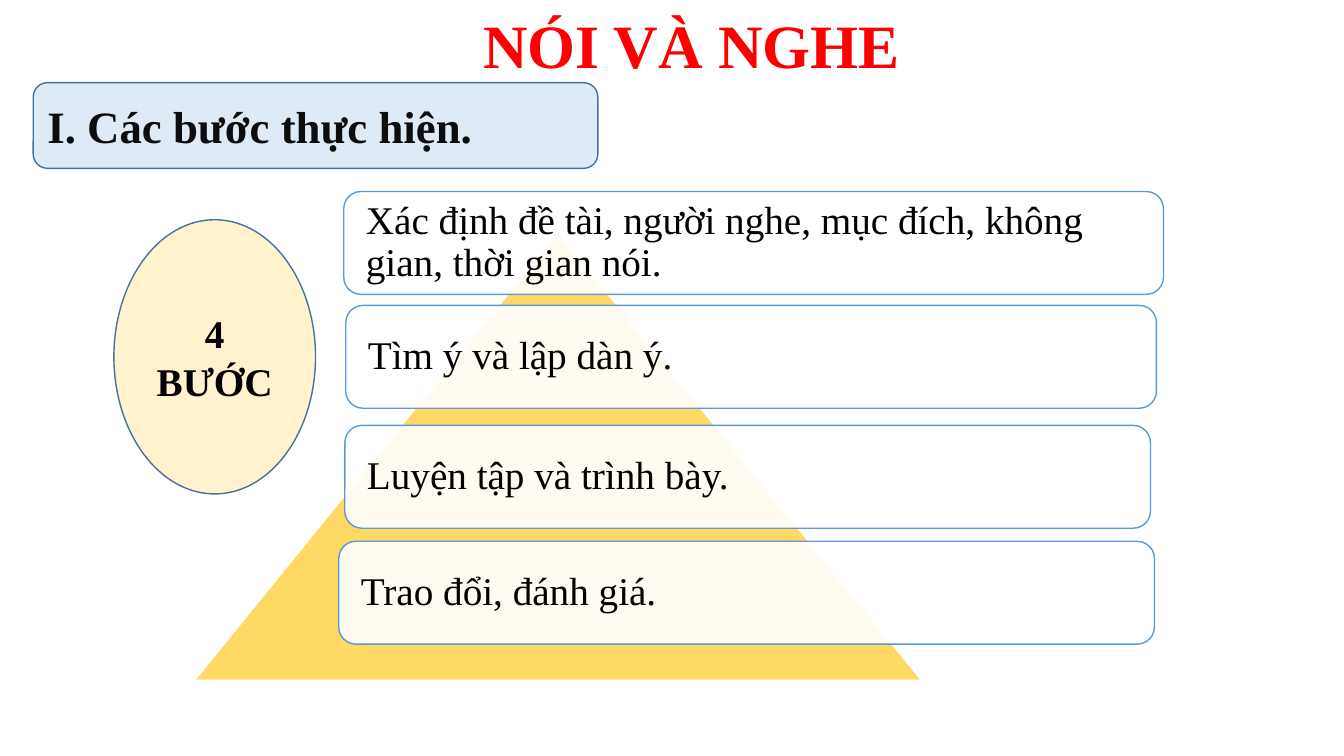
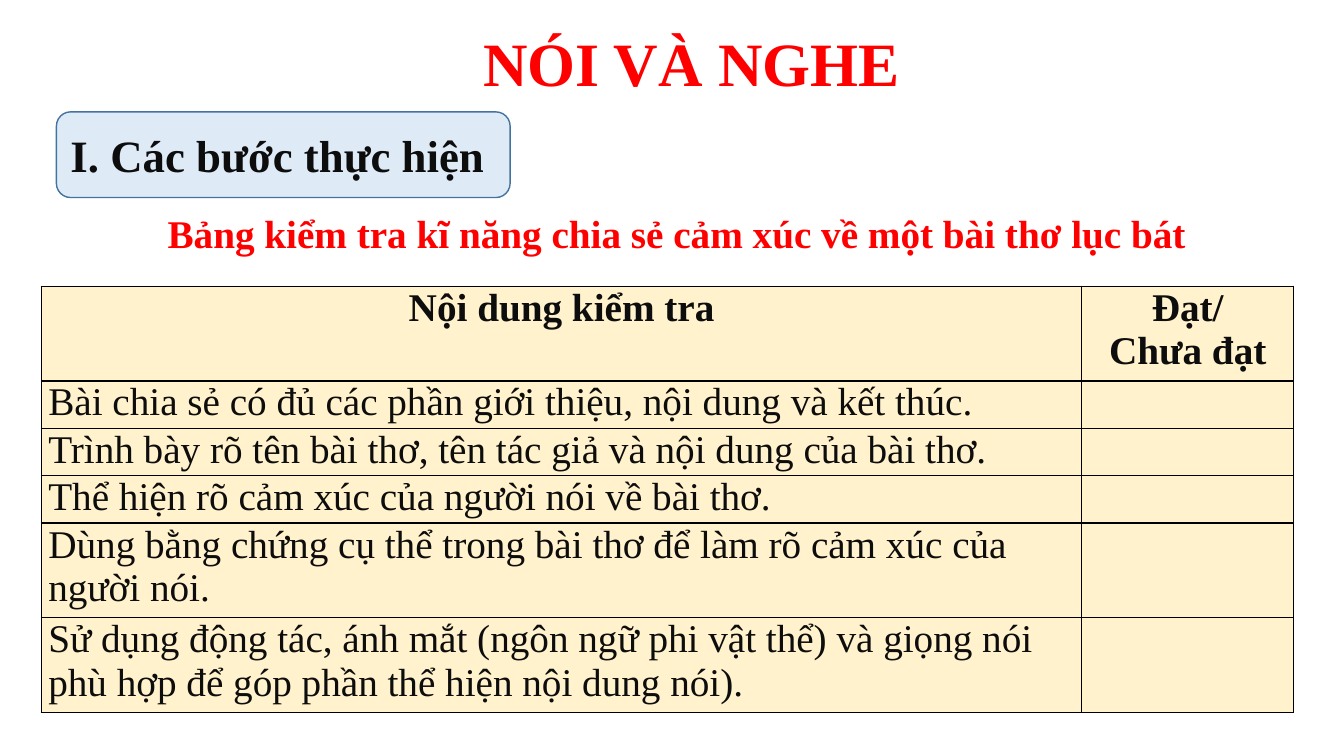
from lxml import etree
from pptx import Presentation
from pptx.dml.color import RGBColor
from pptx.enum.shapes import MSO_SHAPE
from pptx.enum.text import MSO_ANCHOR, PP_ALIGN
from pptx.oxml.ns import qn
from pptx.util import Inches, Pt

LEFT, CENTER = PP_ALIGN.LEFT, PP_ALIGN.CENTER
TOP, MIDDLE = MSO_ANCHOR.TOP, MSO_ANCHOR.MIDDLE
ROUNDED, ELLIPSE = MSO_SHAPE.ROUNDED_RECTANGLE, MSO_SHAPE.OVAL
TRIANGLE = MSO_SHAPE.ISOSCELES_TRIANGLE

FONT = "Times New Roman"
COLORS = {
    "title": "FF0000", "title_edge": "FFC000", "ink": "0D0D0D",
    "black": "000000", "white": "FFFFFF", "heading": "DEEBF7",
    "edge": "43739E", "card_edge": "5B9BD5", "gold": "FFD966",
    "cream": "FFF2CC",
}
SLIDE_WIDTH, SLIDE_HEIGHT = 13.33, 7.5
TITLE_SIZE, HEADING_SIZE, BODY_SIZE = 44, 32, 28

CARD_HEIGHT, CARD_INSET = 1.02, 0.17
STEPS = [  # left, top and width of the card, then its text
    (3.41, 1.9, 8.13,
     "Xác định đề tài, người nghe, mục đích, không gian, thời gian nói."),
    (3.43, 3.03, 8.04, "Tìm ý và lập dàn ý."),
    (3.42, 4.22, 7.99, "Luyện tập và trình bày."),
    (3.36, 5.37, 8.09, "Trao đổi, đánh giá."),
]

LINE_ROW = 0.47
CHECKLIST = [  # lines of text in the row, then its cells
    (2, "Nội dung kiểm tra", "Đạt/\nChưa đạt"),
    (1, "Bài chia sẻ có đủ các phần giới thiệu, nội dung và kết thúc.", ""),
    (1, "Trình bày rõ tên bài thơ, tên tác giả và nội dung của bài thơ.", ""),
    (1, "Thể hiện rõ cảm xúc của người nói về bài thơ.", ""),
    (2, "Dùng bằng chứng cụ thể trong bài thơ để làm rõ cảm xúc của "
        "người nói.", ""),
    (2, "Sử dụng động tác, ánh mắt (ngôn ngữ phi vật thể) và giọng nói "
        "phù hợp để góp phần thể hiện nội dung nói).", ""),
]


def color(name):
    return RGBColor.from_string(COLORS[name])


def add_color_fill(parent, name):
    fill = etree.SubElement(parent, qn("a:solidFill"))
    etree.SubElement(fill, qn("a:srgbClr"), val=COLORS[name])


def write(frame, text, size, ink, bold=False, align=LEFT):
    frame.text = text
    for para in frame.paragraphs:
        para.alignment = align
        for span in para.runs:
            span.font.name = FONT
            span.font.size = Pt(size)
            span.font.bold = bold
            span.font.color.rgb = color(ink)


def add_text(page, box, text, size, ink, wrap=True):
    frame = page.shapes.add_textbox(*map(Inches, box)).text_frame
    frame.word_wrap = wrap
    write(frame, text, size, ink, bold=True, align=CENTER)
    return frame


def add_figure(page, kind, box, fill, edge):
    figure = page.shapes.add_shape(kind, *map(Inches, box))
    figure.shadow.inherit = False
    figure.fill.solid()
    figure.fill.fore_color.rgb = color(fill)
    figure.line.color.rgb = color(edge)
    figure.line.width = Pt(1)
    figure.text_frame.word_wrap = True
    figure.text_frame.vertical_anchor = MIDDLE
    return figure


def add_title(page, top):
    frame = add_text(page, (3.76, top, 6.2, 0.84), "NÓI VÀ NGHE",
                     TITLE_SIZE, "title")
    outline = etree.Element(qn("a:ln"), w=str(Pt(1)))
    add_color_fill(outline, "title_edge")
    frame.paragraphs[0].runs[0].font._element.insert(0, outline)


def add_heading(page, left, top, width, text):
    band = add_figure(page, ROUNDED, (left, top, width, 0.85),
                      "heading", "edge")
    write(band.text_frame, text, HEADING_SIZE, "ink", bold=True)


def add_step_card(page, left, top, width, text):
    card = add_figure(page, ROUNDED, (left, top, width, CARD_HEIGHT),
                      "white", "card_edge")
    tint = card.fill._xPr.find(qn("a:solidFill"))[0]
    etree.SubElement(tint, qn("a:alpha"), val="90000")
    frame = card.text_frame
    frame.margin_left = frame.margin_right = Inches(CARD_INSET)
    frame.margin_top = frame.margin_bottom = Inches(CARD_INSET)
    write(frame, text, BODY_SIZE, "black")
    frame.paragraphs[0].line_spacing = 0.9


def style_cell(cell, text, header):
    cell.margin_left = cell.margin_right = Inches(0.07)
    cell.margin_top = cell.margin_bottom = 0
    cell.vertical_anchor = TOP
    write(cell.text_frame, text, BODY_SIZE, "ink", bold=header,
          align=CENTER if header else LEFT)
    properties = cell._tc.get_or_add_tcPr()
    for side in ("lnL", "lnR", "lnT", "lnB"):
        border = etree.SubElement(properties, qn(f"a:{side}"), w=str(Pt(1)))
        add_color_fill(border, "black")
    cell.fill.solid()
    cell.fill.fore_color.rgb = color("cream")


def add_checklist(page, left, top, widths):
    heights = [row[0] * LINE_ROW for row in CHECKLIST]
    box = (left, top, sum(widths), sum(heights))
    table = page.shapes.add_table(len(CHECKLIST), len(widths),
                                  *map(Inches, box)).table
    table.first_row = table.horz_banding = False
    for column, width in zip(table.columns, widths):
        column.width = Inches(width)
    for index, (_, *texts) in enumerate(CHECKLIST):
        table.rows[index].height = Inches(heights[index])
        for cell, text in zip(table.rows[index].cells, texts):
            style_cell(cell, text, header=index == 0)


def add_page(deck):
    return deck.slides.add_slide(deck.slide_layouts[6])


def build_steps(deck):
    page = add_page(deck)
    add_title(page, 0.02)
    add_figure(page, TRIANGLE, (1.93, 2.31, 7.21, 4.44), "gold", "white")
    for step in STEPS:
        add_step_card(page, *step)
    add_heading(page, 0.33, 0.82, 5.6, "I. Các bước thực hiện.")
    badge = add_figure(page, ELLIPSE, (1.13, 2.18, 2, 2.72), "cream", "edge")
    write(badge.text_frame, "4 BƯỚC", BODY_SIZE, "black", bold=True,
          align=CENTER)


def build_checklist(deck):
    page = add_page(deck)
    add_title(page, 0.2)
    add_heading(page, 0.56, 1.11, 4.5, "I. Các bước thực hiện")
    add_checklist(page, 0.41, 2.84, (10.32, 2.1))
    add_text(page, (1.5, 2.03, 10.42, 0.57),
             "Bảng kiểm tra kĩ năng chia sẻ cảm xúc về một bài thơ lục bát",
             BODY_SIZE, "title", wrap=False)


def main():
    deck = Presentation()
    deck.slide_width = Inches(SLIDE_WIDTH)
    deck.slide_height = Inches(SLIDE_HEIGHT)
    build_steps(deck)
    build_checklist(deck)
    deck.save("out.pptx")


if __name__ == "__main__":
    main()
